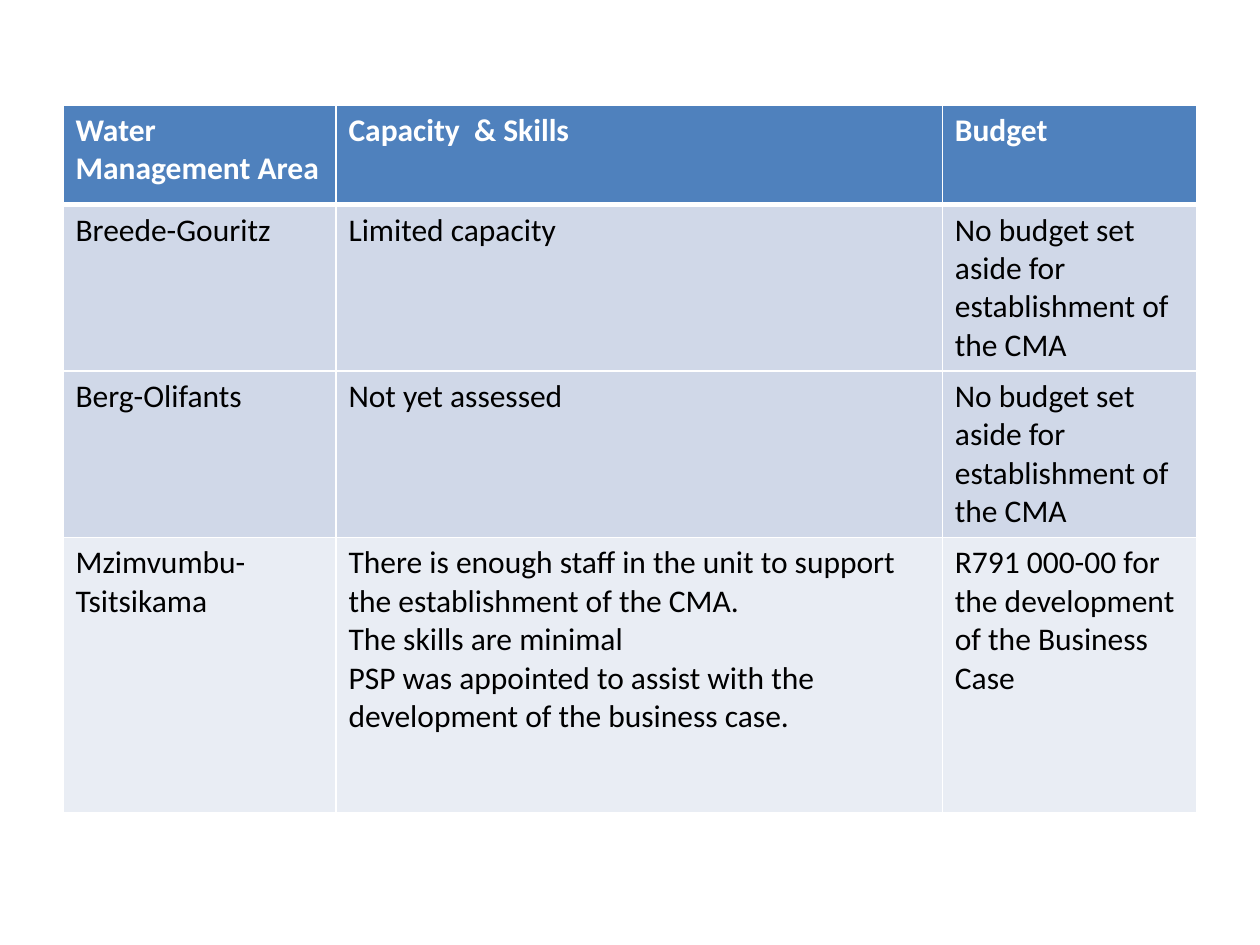
from dataclasses import dataclass

from lxml.etree import SubElement
from pptx import Presentation
from pptx.dml.color import RGBColor as RGB
from pptx.oxml.ns import qn
from pptx.util import Pt


@dataclass(frozen=True)
class Theme:
    font: str = "Calibri"
    size: int = 18
    header_fill: str = "4F81BD"
    header_text: str = "FFFFFF"
    dark_band: str = "D0D8E8"
    light_band: str = "E9EDF4"
    body_text: str = "000000"
    border: str = "FFFFFF"
    thin: int = 1
    thick: int = 3


class SlideBuilder:
    def __init__(self, slide, theme):
        self.s = slide
        self.theme = theme

    def table(self, left, top, col_widths, row_heights, rows, fills):
        frame = self.s.shapes.add_table(
            len(rows), len(col_widths), Pt(left), Pt(top),
            Pt(sum(col_widths)), Pt(sum(row_heights)))
        table = frame.table
        for col, width in zip(table.columns, col_widths):
            col.width = Pt(width)
        for row, height in zip(table.rows, row_heights):
            row.height = Pt(height)
        for i, (texts, fill) in enumerate(zip(rows, fills)):
            for j, text in enumerate(texts):
                self.cell(table.cell(i, j), text, fill, i)

    def cell(self, cell, text, fill, row):
        t = self.theme
        is_header = row == 0
        cell.fill.solid()
        cell.fill.fore_color.rgb = RGB.from_string(fill)
        cell.text_frame.text = text
        color = t.header_text if is_header else t.body_text
        font = {"name": t.font, "size": Pt(t.size), "bold": is_header}
        for p in cell.text_frame.paragraphs:
            for r in p.runs:
                for name, value in font.items():
                    setattr(r.font, name, value)
                r.font.color.rgb = RGB.from_string(color)
        self.borders(cell, {
            "L": t.thin,
            "R": t.thin,
            "T": t.thick if row == 1 else t.thin,
            "B": t.thick if is_header else t.thin,
        })

    def borders(self, cell, widths):
        """Draw the sides L, R, T, B; the schema wants them before the fill."""
        props = cell._tc.get_or_add_tcPr()
        for i, (side, width) in enumerate(widths.items()):
            line = SubElement(props, qn(f"a:ln{side}"), w=str(Pt(width)))
            fill = SubElement(line, qn("a:solidFill"))
            SubElement(fill, qn("a:srgbClr"), val=self.theme.border)
            props.insert(i, line)


NO_BUDGET = "No budget set aside for establishment of the CMA"
ROWS = [
    ("Water Management Area", "Capacity  & Skills", "Budget"),
    ("Breede-Gouritz", "Limited capacity", NO_BUDGET),
    ("Berg-Olifants", "Not yet assessed", NO_BUDGET),
    ("Mzimvumbu-Tsitsikama",
     "There is enough staff in the unit to support the establishment of the CMA.\n"
     "The skills are minimal\n"
     "PSP was appointed to assist with the development of the business case.",
     "R791 000-00 for the development of the Business Case"),
]


def main():
    prs = Presentation()
    prs.slide_width, prs.slide_height = Pt(720), Pt(540)
    theme = Theme()
    builder = SlideBuilder(prs.slides.add_slide(prs.slide_layouts[6]), theme)
    builder.table(
        left=36, top=60,
        col_widths=[156, 346.5, 145.5],
        row_heights=[57, 95, 95, 157.5],
        rows=ROWS,
        fills=[theme.header_fill, theme.dark_band, theme.dark_band, theme.light_band])
    prs.save("out.pptx")


if __name__ == "__main__":
    main()
